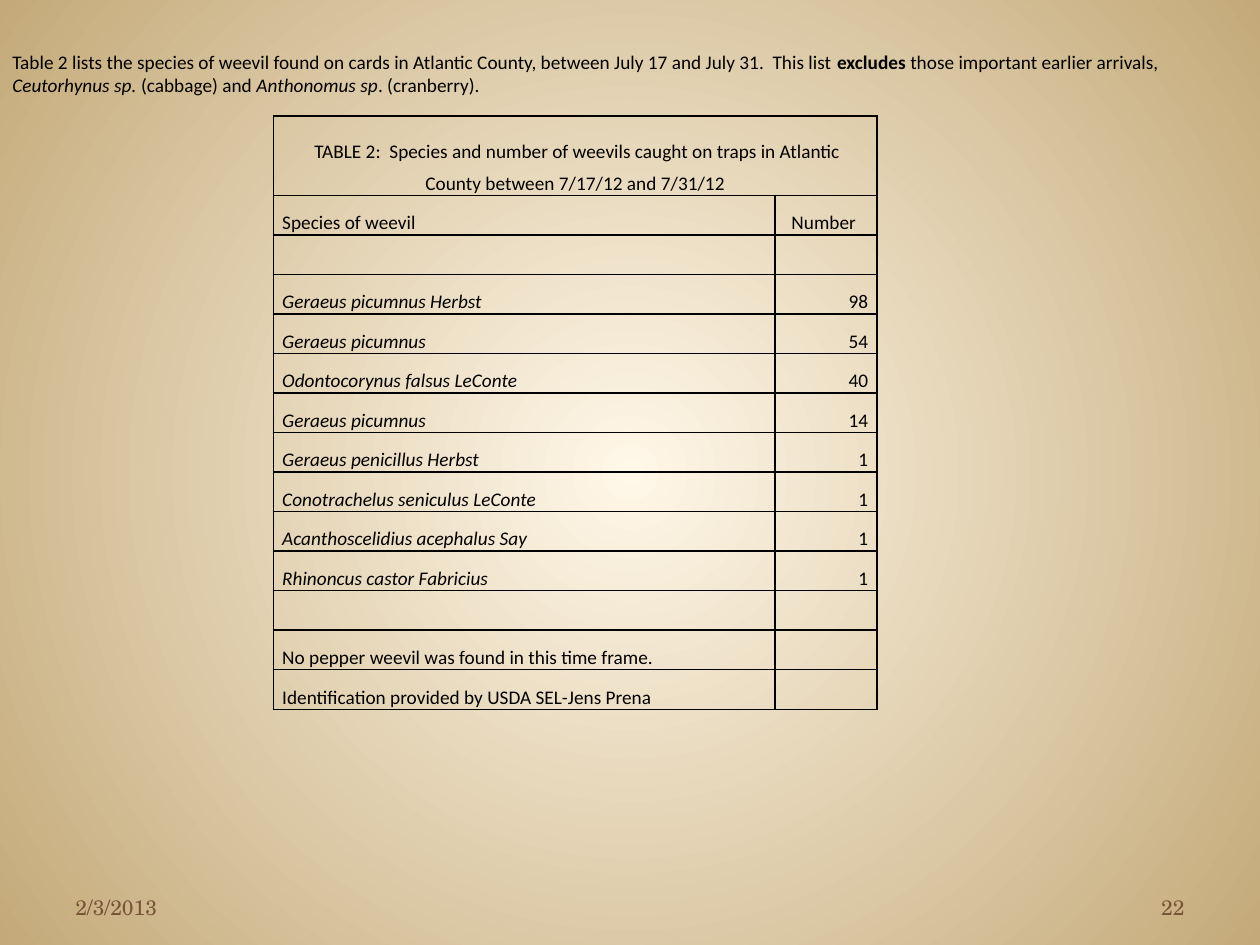
from dataclasses import dataclass

from lxml import etree
from pptx import Presentation
from pptx.dml.color import RGBColor
from pptx.enum.text import MSO_ANCHOR, PP_ALIGN
from pptx.oxml.ns import qn
from pptx.util import Inches, Pt

LEFT, CENTER, RIGHT = PP_ALIGN.LEFT, PP_ALIGN.CENTER, PP_ALIGN.RIGHT
MIDDLE, BOTTOM = MSO_ANCHOR.MIDDLE, MSO_ANCHOR.BOTTOM
BLANK_LAYOUT = 6


@dataclass(frozen=True)
class Theme:
    glow: str = "FFF7E8"
    edge: str = "C4AA7A"
    ink: str = "000000"
    footer_ink: str = "795339"
    body_font: str = "Calibri"
    footer_font: str = "TeX Gyre Schola"
    body_size: float = 11
    footer_size: float = 12
    line_pitch: float = 18.1
    border: float = 1


THEME = Theme()
BODY = {"name": THEME.body_font, "size": Pt(THEME.body_size)}
FOOTER = {"name": THEME.footer_font, "size": Pt(THEME.footer_size)}
ITALIC = {"italic": True}
BOLD = {"bold": True}

INTRO = [
    ("Table 2 lists the species of weevil found on cards in Atlantic County, "
     "between July 17 and July 31.  This list ", {}),
    ("excludes", BOLD),
    (" those important earlier arrivals, ", {}),
    ("Ceutorhynus sp.", ITALIC),
    (" (cabbage) and ", {}),
    ("Anthonomus sp", ITALIC),
    (". (cranberry).", {}),
]
CAPTION = (" TABLE 2:  Species and number of weevils caught on traps in Atlantic "
           "County between 7/17/12 and 7/31/12")
CATCHES = [
    ("Geraeus picumnus Herbst", 98),
    ("Geraeus picumnus", 54),
    ("Odontocorynus falsus LeConte", 40),
    ("Geraeus picumnus", 14),
    ("Geraeus penicillus Herbst", 1),
    ("Conotrachelus seniculus LeConte", 1),
    ("Acanthoscelidius acephalus Say", 1),
    ("Rhinoncus castor Fabricius", 1),
]
REMARKS = [
    "No pepper weevil was found in this time frame.",
    "Identification provided by USDA SEL-Jens Prena",
]


def paint_background(slide):
    """Radial gradient, light in the middle of the slide."""
    fill = slide.background.fill
    fill.gradient()
    for stop, color in zip(fill.gradient_stops, (THEME.glow, THEME.edge)):
        stop.color.rgb = RGBColor.from_string(color)
    gradient = slide.element.find(".//" + qn("a:gradFill"))
    gradient.remove(gradient.find(qn("a:lin")))
    circle = etree.SubElement(gradient, qn("a:path"), path="circle")
    etree.SubElement(circle, qn("a:fillToRect"),
                     {side: "50000" for side in "ltrb"})


def add_run(paragraph, text, style, color):
    run = paragraph.add_run()
    run.text = text
    for attribute, value in style.items():
        setattr(run.font, attribute, value)
    run.font.color.rgb = RGBColor.from_string(color)


def add_text(slide, box, runs, style, color, anchor, align=LEFT):
    frame = slide.shapes.add_textbox(*map(Inches, box)).text_frame
    frame.word_wrap = True
    frame.vertical_anchor = anchor
    paragraph = frame.paragraphs[0]
    paragraph.alignment = align
    for text, emphasis in runs:
        add_run(paragraph, text, {**style, **emphasis}, color)


def draw_borders(cell):
    properties = cell._tc.get_or_add_tcPr()
    for position, side in enumerate(("lnL", "lnR", "lnT", "lnB")):
        line = etree.Element(qn(f"a:{side}"), w=str(Pt(THEME.border)))
        solid = etree.SubElement(line, qn("a:solidFill"))
        etree.SubElement(solid, qn("a:srgbClr"), val=THEME.ink)
        properties.insert(position, line)


def fill_cell(cell, text, align, emphasis):
    cell.fill.background()
    draw_borders(cell)
    cell.vertical_anchor = BOTTOM
    cell.margin_left = cell.margin_right = Inches(0.07)
    cell.margin_top = cell.margin_bottom = 0
    paragraph = cell.text_frame.paragraphs[0]
    paragraph.alignment = align
    paragraph.line_spacing = Pt(THEME.line_pitch)
    if text:
        add_run(paragraph, text, {**BODY, **emphasis}, THEME.ink)


def add_weevil_table(slide):
    # Each row: first text, its alignment and emphasis, second text, its alignment
    empty = ("", LEFT, {}, "", LEFT)
    rows = [
        (CAPTION, CENTER, {}, "", LEFT),
        ("Species of weevil", LEFT, {}, "Number ", CENTER),
        empty,
        *[(species, LEFT, ITALIC, str(count), RIGHT) for species, count in CATCHES],
        empty,
        *[(remark, LEFT, {}, "", LEFT) for remark in REMARKS],
    ]
    table = slide.shapes.add_table(
        len(rows), 2, *map(Inches, (2.17, 0.92, 4.79, 4.71))).table
    table.first_row = table.horz_banding = False
    for column, width in zip(table.columns, (3.98, 0.81)):
        column.width = Inches(width)
    for index, (name, name_align, emphasis, number, number_align) in enumerate(rows):
        table.rows[index].height = Inches(0.314 if index else 0.63)
        fill_cell(table.cell(index, 0), name, name_align, emphasis)
        fill_cell(table.cell(index, 1), number, number_align, {})
    table.cell(0, 0).merge(table.cell(0, 1))


def main():
    deck = Presentation()
    deck.slide_width, deck.slide_height = Inches(10), Inches(7.5)
    slide = deck.slides.add_slide(deck.slide_layouts[BLANK_LAYOUT])
    paint_background(slide)
    for left, text, align in ((0.5, "2/3/2013", LEFT), (7.17, "22", RIGHT)):
        add_text(slide, (left, 6.83, 2.33, 0.52), [(text, {})],
                 FOOTER, THEME.footer_ink, BOTTOM, align)
    add_weevil_table(slide)
    add_text(slide, (0, 0.35, 10, 0.47), INTRO, BODY, THEME.ink, MIDDLE)
    deck.save("out.pptx")


if __name__ == "__main__":
    main()
